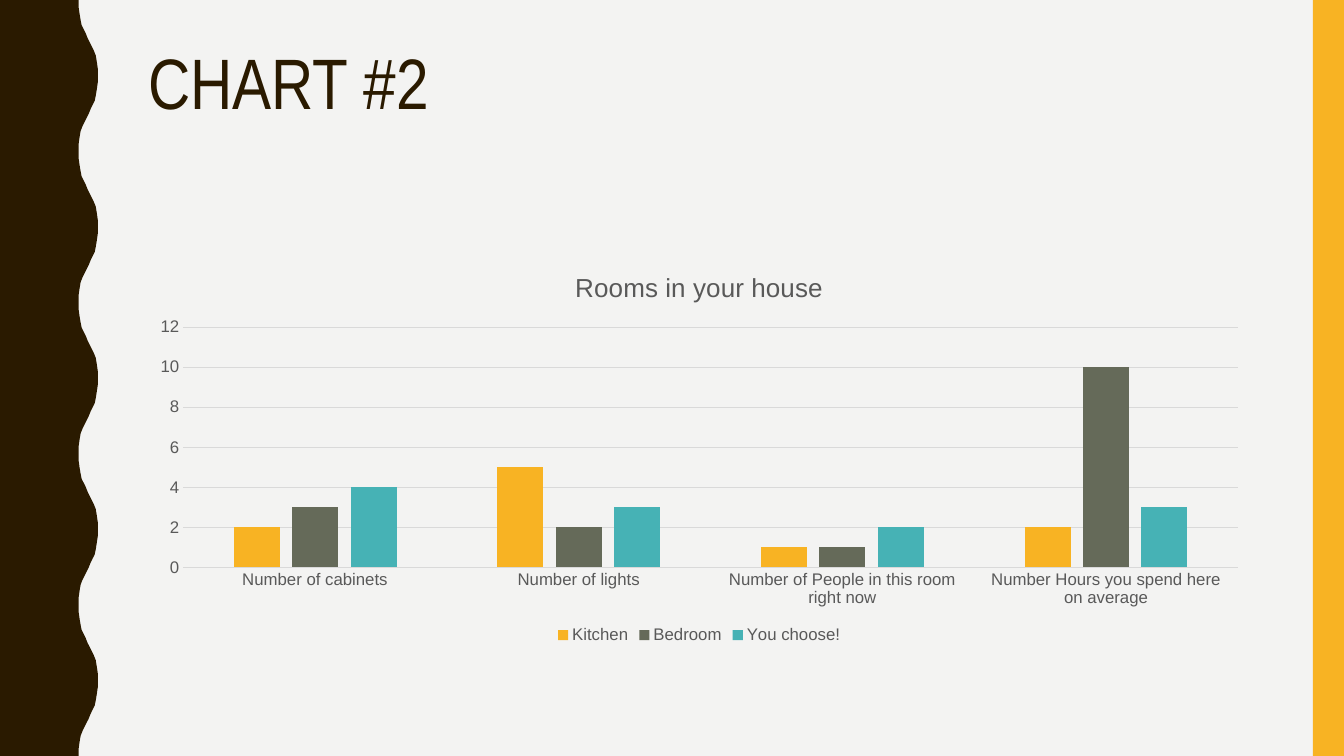
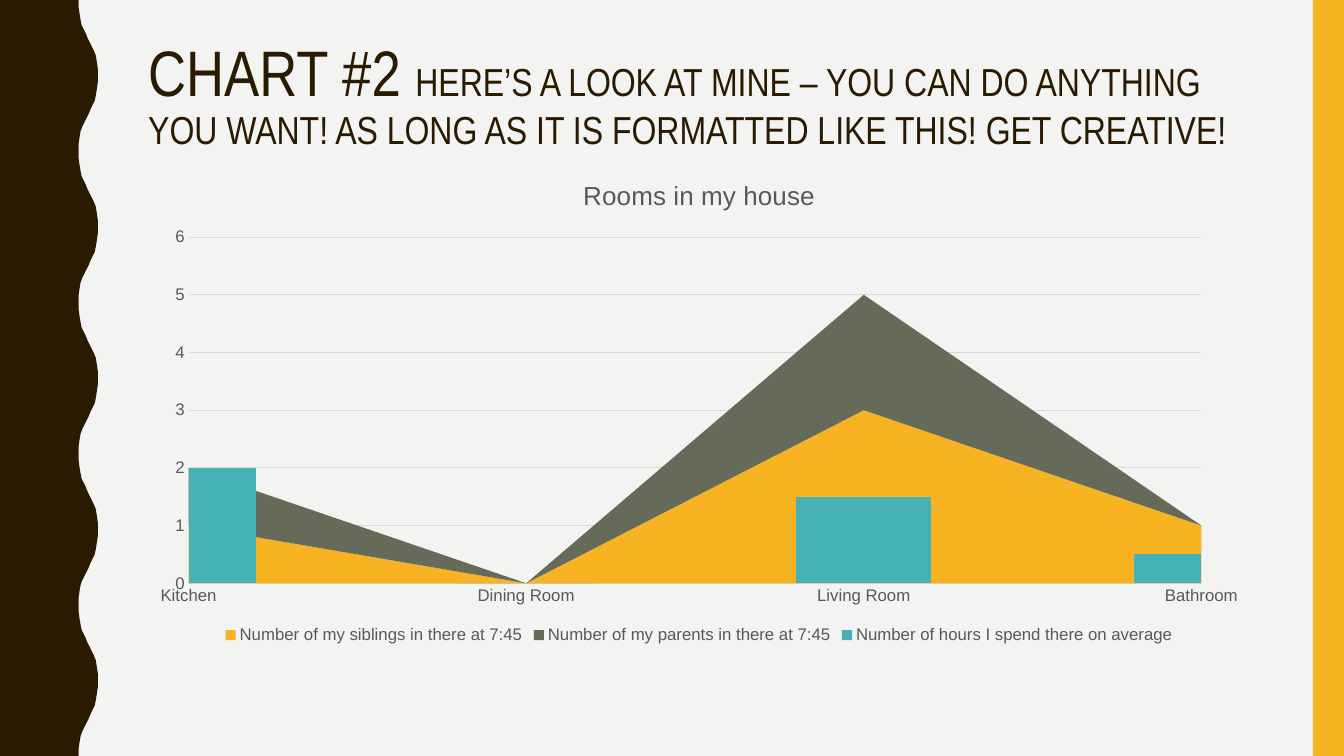
from lxml.etree import SubElement
from pptx import Presentation
from pptx.chart.data import CategoryChartData
from pptx.dml.color import RGBColor
from pptx.enum.chart import XL_CHART_TYPE, XL_LEGEND_POSITION, XL_TICK_MARK
from pptx.enum.shapes import MSO_SHAPE
from pptx.enum.text import MSO_ANCHOR, MSO_AUTO_SIZE, PP_ALIGN
from pptx.oxml import parse_xml
from pptx.oxml.ns import nsdecls, qn
from pptx.util import Inches, Pt

WIDE, HIGH = 13.33, 7.5
PAPER, BROWN, GOLD = "F3F3F2", "2A1A00", "F8B323"
OLIVE, TEAL, GREY, RULE = "656A59", "46B2B5", "595959", "D9D9D9"
LEFT, SPAN, FOOT = 1.37, 11.13, 6.43
HALF = 0.75
BEND = [(0.78, 0), (0.78, 0.07), (0.79, 0.14), (0.8, 0.2), (0.81, 0.25),
        (0.83, 0.29), (0.85, 0.33), (0.87, 0.38), (0.89, 0.42), (0.91, 0.46),
        (0.93, 0.5), (0.95, 0.55), (0.96, 0.61), (0.97, 0.68)]


def color(code):
    """Turn a hex string into a colour."""
    return RGBColor.from_string(code)


def paint(shape, code):
    """Give a shape a flat fill with no line or shadow."""
    shape.fill.solid()
    shape.fill.fore_color.rgb = color(code)
    shape.line.fill.background()
    shape.shadow.inherit = False


def style(font, name, size, code):
    """Set the face, size and colour of a font."""
    font.name, font.size, font.bold = name, Pt(size), False
    font.color.rgb = color(code)


def wave(shapes, left, top, high):
    """Draw the side band with its rippled right edge."""
    edge = [(left + (1.75 - x if turn % 2 else x), top + turn * HALF + y)
            for turn in range(round(high / HALF)) for x, y in BEND]
    edge += [(left + 0.78, top + high), (left, top + high)]
    pen = shapes.build_freeform(Inches(left), Inches(top))
    pen.add_line_segments([(Inches(x), Inches(y)) for x, y in edge])
    band = pen.convert_to_shape()
    paint(band, BROWN)
    return band


def stripe(shapes, left, top, wide, high):
    """Draw the plain band on the right."""
    box = [Inches(n) for n in (left, top, wide, high)]
    band = shapes.add_shape(MSO_SHAPE.RECTANGLE, *box)
    paint(band, GOLD)
    return band


def dress(deck, slide):
    """Put the background and both bands on the master."""
    master = deck.slide_master
    master.background.fill.solid()
    master.background.fill.fore_color.rgb = color(PAPER)
    bands = [wave(slide.shapes, 0, 0, HIGH),
             stripe(slide.shapes, 13.02, 0, 0.31, HIGH)]
    for spot, band in enumerate(bands, 2):
        master.shapes.element.insert(spot, band.element)


def head(slide, top, parts):
    """Fill the title with runs of text and size."""
    title = slide.shapes.title
    title.left, title.top = Inches(LEFT), Inches(top)
    title.width, title.height = Inches(SPAN), Inches(1.63)
    frame = title.text_frame
    frame.auto_size = MSO_AUTO_SIZE.NONE
    frame.vertical_anchor = MSO_ANCHOR.TOP
    para = frame.paragraphs[0]
    para.alignment, para.line_spacing = PP_ALIGN.LEFT, 0.9
    style(para.font, "Arial Narrow", parts[0][1], BROWN)
    for text, size in parts:
        run = para.add_run()
        run.text = text
        if size != parts[0][1]:
            run.font.size = Pt(size)


def plot(slide, top, name, cats, rows, peak, step, gap, lap):
    """Add a column chart below the title."""
    data = CategoryChartData()
    data.categories = cats
    for label, vals in rows:
        data.add_series(label, vals)
    box = [Inches(n) for n in (LEFT, top, SPAN, FOOT - top)]
    chart = slide.shapes.add_chart(
        XL_CHART_TYPE.COLUMN_CLUSTERED, *box, data).chart
    style(chart.font, "Arial", 12, GREY)
    chart.has_title = True
    para = chart.chart_title.text_frame.paragraphs[0]
    para.text = name
    style(para.font, "Arial", 18.6, GREY)
    chart.has_legend = True
    chart.legend.position = XL_LEGEND_POSITION.BOTTOM
    chart.legend.include_in_layout = False
    for axis in (chart.category_axis, chart.value_axis):
        axis.major_tick_mark = axis.minor_tick_mark = XL_TICK_MARK.NONE
    axis.minimum_scale, axis.maximum_scale, axis.major_unit = 0, peak, step
    axis.format.line.fill.background()
    for line in (axis.major_gridlines.format.line,
                 chart.category_axis.format.line):
        line.color.rgb, line.width = color(RULE), Pt(0.75)
    bars = chart.plots[0]
    bars.gap_width, bars.overlap, bars.vary_by_categories = gap, lap, False
    for row, code in zip(bars.series, (GOLD, OLIVE, TEAL)):
        row.format.fill.solid()
        row.format.fill.fore_color.rgb = color(code)
    return chart


def stack(chart, count):
    """Turn the first series into stacked areas behind the bars."""
    bars = next(chart.element.iter(qn("c:barChart")))
    area = parse_xml(f'<c:areaChart {nsdecls("c")}>'
                     '<c:grouping val="stacked"/><c:varyColors val="0"/>'
                     '</c:areaChart>') if count else None
    for row in bars.findall(qn("c:ser"))[:count]:
        for flag in row.findall(qn("c:invertIfNegative")):
            row.remove(flag)
        area.append(row)
    for axis in bars.findall(qn("c:axId")):
        SubElement(area, qn("c:axId")).set("val", axis.get("val"))
    bars.addprevious(area)


def main():
    """Build both chart slides."""
    deck = Presentation()
    deck.slide_width, deck.slide_height = Inches(WIDE), Inches(HIGH)
    first, last = [deck.slides.add_slide(deck.slide_layouts[5])
                   for _ in range(2)]
    dress(deck, first)
    head(first, 0.42, [("CHART #2", 51)])
    plot(first, 2.5, "Rooms in your house",
         ["Number of cabinets", "Number of lights",
          "Number of People in this room right now",
          "Number Hours you spend here on average"],
         [("Kitchen", (2, 5, 1, 2)), ("Bedroom", (3, 2, 1, 10)),
          ("You choose!", (4, 3, 2, 3))], 12, 2, 219, -27)
    head(last, 0.36, [
        ("CHART #2 ", 45.9),
        ("HERE’S A LOOK AT MINE – YOU CAN DO ANYTHING YOU WANT! "
         "AS LONG AS IT IS FORMATTED LIKE THIS! GET CREATIVE!", 27.9)])
    chart = plot(last, 1.57, "Rooms in my house",
                 ["Kitchen", "Dining Room", "Living Room", "Bathroom"],
                 [("Number of my siblings in there at 7:45", (1, 0, 3, 1)),
                  ("Number of my parents in there at 7:45", (1, 0, 2, 0)),
                  ("Number of hours I spend there on average",
                   (2, 0, 1.5, 0.5))], 6, 1, 150, 0)
    stack(chart, 2)
    deck.save("out.pptx")


if __name__ == "__main__":
    main()
